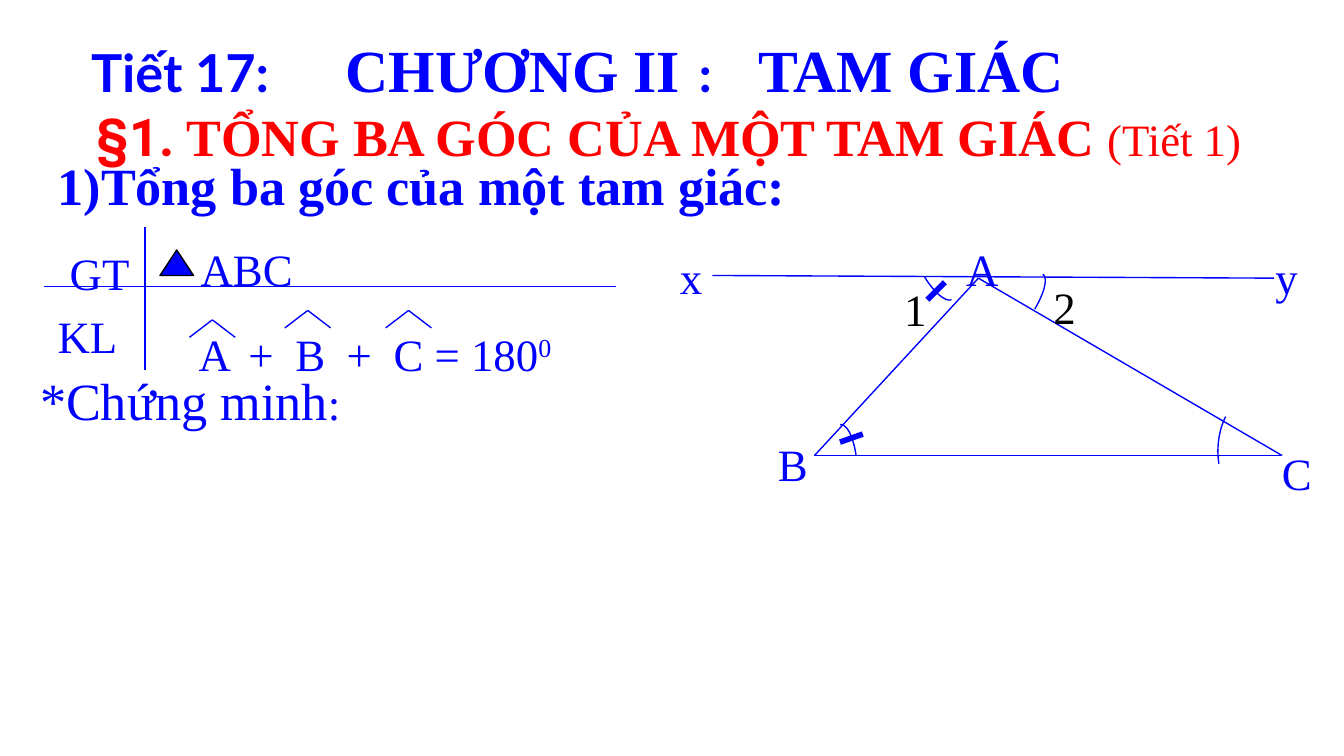
from lxml.etree import SubElement
from pptx import Presentation
from pptx.dml.color import RGBColor
from pptx.enum.shapes import MSO_CONNECTOR, MSO_SHAPE
from pptx.enum.text import MSO_ANCHOR, MSO_AUTO_SIZE, PP_ALIGN
from pptx.oxml.ns import qn
from pptx.util import Inches, Pt

BLUE, RED, BLACK = "0000FF", "FF0000", "000000"
SERIF = "Times New Roman"


def color(value):
    return RGBColor.from_string(value)


def write(box, spans, size=24, ink=BLUE, bold=False, name=SERIF,
          align=PP_ALIGN.LEFT, tab=None, spaced=True):
    """Fill a box with one paragraph; each span is (text, font overrides)."""
    frame = box.text_frame
    frame.word_wrap = True
    frame.auto_size = MSO_AUTO_SIZE.NONE
    frame.vertical_anchor = MSO_ANCHOR.TOP
    para = frame.paragraphs[0]
    para.alignment = align
    properties = para._p.get_or_add_pPr()
    if spaced:
        before = SubElement(properties, qn("a:spcBef"))
        SubElement(before, qn("a:spcPct"), val="50000")
    if tab:
        stops = SubElement(properties, qn("a:tabLst"))
        SubElement(stops, qn("a:tab"), pos=str(Inches(tab)), algn="l")
    para.font.size = Pt(size)
    para.font.name = name
    para.font.bold = bold
    para.font.color.rgb = color(ink)
    for text, overrides in spans:
        span = para.add_run()
        span.text = text
        for key, value in overrides.items():
            if key == "baseline":
                span._r.get_or_add_rPr().set("baseline", str(value))
            else:
                setattr(span.font, key, value)


def add_text(page, left, top, width, height, spans, **style):
    box = page.shapes.add_textbox(Inches(left), Inches(top), Inches(width), Inches(height))
    write(box, [(spans, {})] if isinstance(spans, str) else spans, **style)


def add_line(page, start, end, width=0.75):
    line = page.shapes.add_connector(
        MSO_CONNECTOR.STRAIGHT, *(Inches(value) for value in (*start, *end)))
    line.line.color.rgb = color(BLUE)
    line.line.width = Pt(width)
    SubElement(line._element.spPr, qn("a:effectLst"))


def add_arc(page, controls, steps=12):
    """Draw a cubic curve through its four control points."""
    points = []
    for step in range(steps + 1):
        t = step / steps
        weights = ((1 - t) ** 3, 3 * t * (1 - t) ** 2, 3 * t * t * (1 - t), t ** 3)
        points.append(tuple(
            Inches(sum(weight * point[axis] for weight, point in zip(weights, controls)))
            for axis in (0, 1)))
    builder = page.shapes.build_freeform(*points[0])
    builder.add_line_segments(points[1:], close=False)
    arc = builder.convert_to_shape()
    arc.shadow.inherit = False
    arc.fill.background()
    arc.line.color.rgb = color(BLUE)
    arc.line.width = Pt(0.75)


def add_headings(page, left, top):
    # Chapter title
    title = page.shapes.title
    title.left, title.top = Inches(left + 1.73), Inches(top)
    title.width, title.height = Inches(6.42), Inches(0.64)
    title.text_frame.margin_left = Inches(0.65)
    write(title, [("CHƯƠNG II", {}),
                  (" ", {"size": Pt(14), "name": "Calibri"}),
                  (" :", {"size": Pt(28), "name": "Calibri"}),
                  ("\tTAM GIÁC", {})], size=32, bold=True, tab=3.07)
    # Lesson number, lesson name and section
    add_text(page, left + 0.39, top + 0.06, 1.58, 0.57, "Tiết 17:",
             size=28, bold=True, name="Lato", spaced=False)
    add_text(page, left, top + 0.54, 9.67, 0.57,
             [("§1.", {"name": "Roboto"}),
              (" TỔNG BA GÓC CỦA MỘT TAM GIÁC ", {}),
              ("(Tiết 1)", {"size": Pt(24), "bold": False}),
              (" ", {})],
             size=28, ink=RED, bold=True, align=PP_ALIGN.CENTER, spaced=False)
    add_text(page, left + 0.14, top + 0.9, 6.92, 0.57,
             "1)Tổng ba góc của một tam giác:", size=28, bold=True)


def add_theorem(page, left, top):
    # Cross dividing hypothesis and conclusion
    add_line(page, (left, top + 0.44), (left + 4.25, top + 0.44))
    add_line(page, (left + 0.75, top), (left + 0.75, top + 1.06))
    # Triangle sign
    sign = page.shapes.add_shape(MSO_SHAPE.ISOSCELES_TRIANGLE, Inches(left + 0.86),
                                 Inches(top + 0.17), Inches(0.25), Inches(0.19))
    sign.shadow.inherit = False
    sign.fill.solid()
    sign.fill.fore_color.rgb = color(BLUE)
    sign.line.color.rgb = color(BLACK)
    sign.line.width = Pt(0.75)
    # Labels and angle sum
    for x, y, width, spans in (
            (0.09, 0.09, 0.75, "GT"),
            (0, 0.56, 0.75, "KL"),
            (1, 0.06, 1.5, " ABC"),
            (1.05, 0.69, 0.54, "A"),
            (1.42, 0.69, 0.84, "+\tB"),
            (2.15, 0.69, 2.42, [("+\tC = 180", {}), ("0", {"baseline": 30000})])):
        add_text(page, left + x, top + y, width, 0.51, spans, tab=0.35)
    # Angle hats
    for x, y in ((1.25, 0.69), (1.96, 0.62), (2.71, 0.62)):
        for side in (-0.17, 0.17):
            add_line(page, (left + x, top + y), (left + x + side, top + y + 0.13))
    # Proof heading
    add_text(page, left - 0.13, top + 1, 2.87, 0.57,
             [("*Chứng minh", {}), (":", {"size": Pt(24)})], size=28)


def add_figure(page, left, top):
    def at(x, y):
        return left + x, top + y

    # Triangle and the line xy through A
    a, b, c = at(2.32, 0.32), at(1.1, 1.64), at(4.58, 1.64)
    for start, end in ((a, b), (a, c), (b, c), (at(0.34, 0.3), at(4.52, 0.32))):
        add_line(page, start, end)
    # Angle arcs at C, B, A2 and A1
    for controls in (
            ((4.11, 1.7), (4.09, 1.58), (4.11, 1.45), (4.16, 1.35)),
            ((1.29, 1.41), (1.34, 1.4), (1.39, 1.5), (1.41, 1.64)),
            ((2.8, 0.29), (2.84, 0.32), (2.81, 0.43), (2.74, 0.55)),
            ((2.12, 0.48), (2.08, 0.5), (1.99, 0.43), (1.92, 0.31))):
        add_arc(page, [at(*point) for point in controls])
    # Equal angle ticks
    add_line(page, at(1.46, 1.48), at(1.29, 1.54), width=3)
    add_line(page, at(1.94, 0.48), at(2.07, 0.35), width=3)
    # Point and angle names
    for label, x, y, width, ink in (
            ("A", 2.13, 0, 0.52, BLUE), ("B", 0.73, 1.45, 0.52, BLUE),
            ("C", 4.48, 1.52, 0.52, BLUE), ("x", 0, 0.06, 0.61, BLUE),
            ("y", 4.43, 0.06, 0.61, BLUE), ("1", 1.67, 0.3, 0.43, BLACK),
            ("2", 2.78, 0.28, 0.43, BLACK)):
        add_text(page, *at(x, y), width, 0.51, label, ink=ink)


def main():
    deck = Presentation()
    # Widescreen, 16:9
    deck.slide_width = Inches(10)
    deck.slide_height = deck.slide_width * 9 // 16
    page = deck.slides.add_slide(deck.slide_layouts[5])
    add_headings(page, 0.19, 0.19)
    add_theorem(page, 0.33, 1.69)
    add_figure(page, 4.96, 1.75)
    deck.save("out.pptx")


if __name__ == "__main__":
    main()
